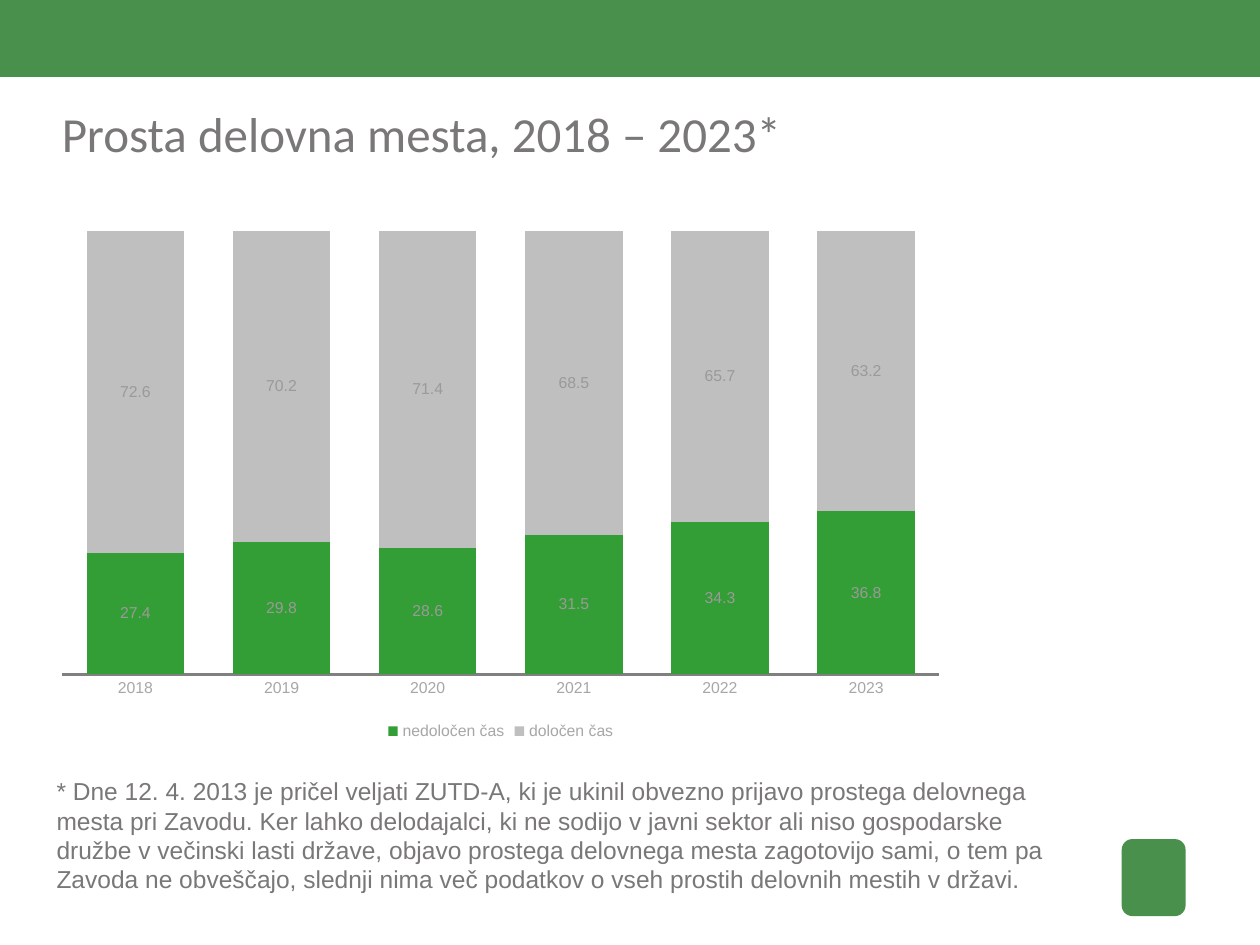
from dataclasses import dataclass

from lxml.etree import SubElement
from pptx import Presentation
from pptx.chart.data import CategoryChartData
from pptx.dml.color import RGBColor
from pptx.enum.chart import XL_CHART_TYPE, XL_LEGEND_POSITION, XL_TICK_LABEL_POSITION, XL_TICK_MARK
from pptx.enum.shapes import MSO_SHAPE
from pptx.enum.text import MSO_ANCHOR, PP_ALIGN
from pptx.oxml import parse_xml
from pptx.oxml.ns import nsdecls, qn
from pptx.util import Pt


@dataclass(frozen=True)
class Theme:
    brand: str = "49904D"
    text: str = "797777"
    axis_text: str = "A8A7A7"
    label_text: str = "9B9999"
    axis_line: str = "808080"
    permanent: str = "339E35"
    temporary: str = "BFBFBF"
    heading_font: str = "Calibri"
    body_font: str = "Arial"
    title_size: float = 28
    note_size: float = 14
    chart_size: float = 9


@dataclass(frozen=True)
class Box:
    left: float
    top: float
    width: float
    height: float

    def lengths(self):
        return Pt(self.left), Pt(self.top), Pt(self.width), Pt(self.height)


THEME = Theme()
YEARS = ["2018", "2019", "2020", "2021", "2022", "2023"]
SERIES = [
    ("nedoločen čas", [27.4, 29.8, 28.6, 31.5, 34.3, 36.8], THEME.permanent),
    ("določen čas", [72.6, 70.2, 71.4, 68.5, 65.7, 63.2], THEME.temporary),
]
NOTE = (
    "* Dne 12. 4. 2013 je pričel veljati ZUTD-A, ki je ukinil obvezno prijavo prostega "
    "delovnega mesta pri Zavodu. Ker lahko delodajalci, ki ne sodijo v javni sektor ali "
    "niso gospodarske družbe v večinski lasti države, objavo prostega delovnega mesta "
    "zagotovijo sami, o tem pa Zavoda ne obveščajo, slednji nima več podatkov o vseh "
    "prostih delovnih mestih v državi."
)


def set_font(font, name, size, color):
    font.name = name
    font.size = Pt(size)
    font.color.rgb = RGBColor.from_string(color)


def add_brand_shape(slide, box, preset):
    shape = slide.shapes.add_shape(preset, *box.lengths())
    shape.shadow.inherit = False
    shape.fill.solid()
    shape.fill.fore_color.rgb = RGBColor.from_string(THEME.brand)
    shape.line.fill.background()


def add_title(slide, box, text):
    title = slide.shapes.title
    title.left, title.top, title.width, title.height = box.lengths()
    frame = title.text_frame
    frame.margin_left = frame.margin_top = frame.margin_right = frame.margin_bottom = 0
    frame.vertical_anchor = MSO_ANCHOR.TOP
    frame.text = text
    paragraph = frame.paragraphs[0]
    paragraph.alignment = PP_ALIGN.LEFT
    set_font(paragraph.runs[0].font, THEME.heading_font, THEME.title_size, THEME.text)


def add_note(slide, box, text):
    frame = slide.shapes.add_textbox(*box.lengths()).text_frame
    frame.word_wrap = True
    frame.text = text
    set_font(frame.paragraphs[0].runs[0].font, THEME.body_font, THEME.note_size, THEME.text)


def set_plot_layout(chart, **fractions):
    plot_area = chart._chartSpace.chart.plotArea
    for old_layout in plot_area.findall(qn("c:layout")):
        plot_area.remove(old_layout)
    layout = parse_xml(f"<c:layout {nsdecls('c')}/>")
    manual = SubElement(layout, qn("c:manualLayout"))
    settings = {"layoutTarget": "inner", "xMode": "edge", "yMode": "edge", **fractions}
    for name, value in settings.items():
        SubElement(manual, qn(f"c:{name}")).set("val", str(value))
    plot_area.insert(0, layout)


def format_axes(chart):
    for axis in (chart.category_axis, chart.value_axis):
        axis.major_tick_mark = axis.minor_tick_mark = XL_TICK_MARK.NONE
        axis.has_major_gridlines = False
        set_font(axis.tick_labels.font, THEME.body_font, THEME.chart_size, THEME.axis_text)
    category_line = chart.category_axis.format.line
    category_line.color.rgb = RGBColor.from_string(THEME.axis_line)
    category_line.width = Pt(1.25)
    value_axis = chart.value_axis
    value_axis.minimum_scale = 0
    value_axis.maximum_scale = 100
    value_axis.tick_label_position = XL_TICK_LABEL_POSITION.NONE
    value_axis.format.line.fill.background()


def add_vacancy_chart(slide, box):
    data = CategoryChartData(number_format="#,##0.0")
    data.categories = YEARS
    for name, values, _ in SERIES:
        data.add_series(name, values)
    chart = slide.shapes.add_chart(XL_CHART_TYPE.COLUMN_STACKED, *box.lengths(), data).chart
    chart.has_title = False
    set_font(chart.font, THEME.body_font, THEME.chart_size, THEME.text)
    chart.has_legend = True
    chart.legend.position = XL_LEGEND_POSITION.BOTTOM
    chart.legend.include_in_layout = False
    set_font(chart.legend.font, THEME.body_font, THEME.chart_size, THEME.axis_text)
    format_axes(chart)
    plot = chart.plots[0]
    plot.gap_width = 50
    plot.overlap = 100
    plot.vary_by_categories = False
    for series, (_, _, color) in zip(plot.series, SERIES):
        series.format.fill.solid()
        series.format.fill.fore_color.rgb = RGBColor.from_string(color)
        labels = series.data_labels
        labels.show_value = True
        labels.number_format = "#,##0.0"
        labels.number_format_is_linked = False
        set_font(labels.font, THEME.body_font, THEME.chart_size, THEME.label_text)
    set_plot_layout(chart, x=0.02, y=0.02, w=0.96, h=0.845)


def main():
    presentation = Presentation()
    presentation.slide_width, presentation.slide_height = Pt(720), Pt(540)
    slide = presentation.slides.add_slide(presentation.slide_layouts[5])
    add_brand_shape(slide, Box(0, -0.5, 720, 44.5), MSO_SHAPE.RECTANGLE)
    add_brand_shape(slide, Box(641, 479.5, 36.5, 44), MSO_SHAPE.ROUNDED_RECTANGLE)
    add_title(slide, Box(35.3, 59, 666.7, 51), "Prosta delovna mesta, 2018 – 2023*")
    add_note(slide, Box(25.2, 440, 601.2, 75), NOTE)
    add_vacancy_chart(slide, Box(25.2, 126, 522, 300))
    presentation.save("out.pptx")


if __name__ == "__main__":
    main()
